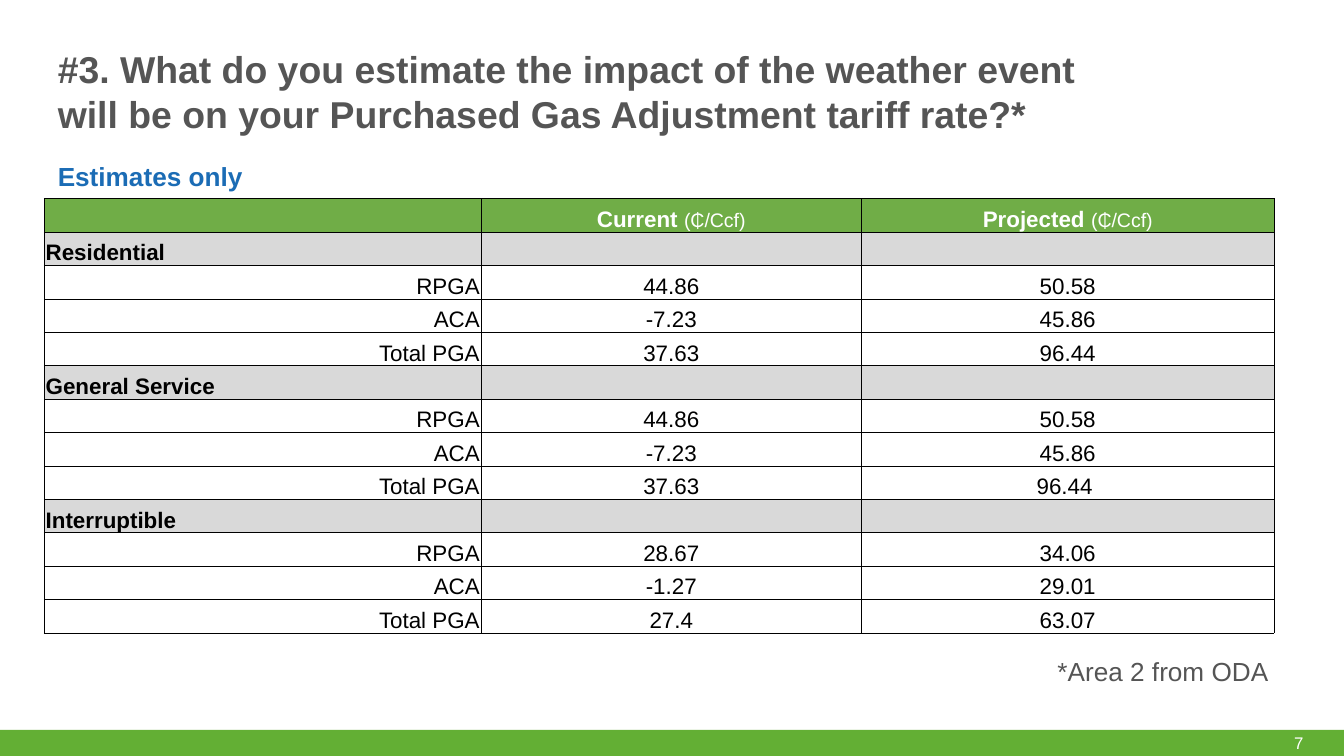
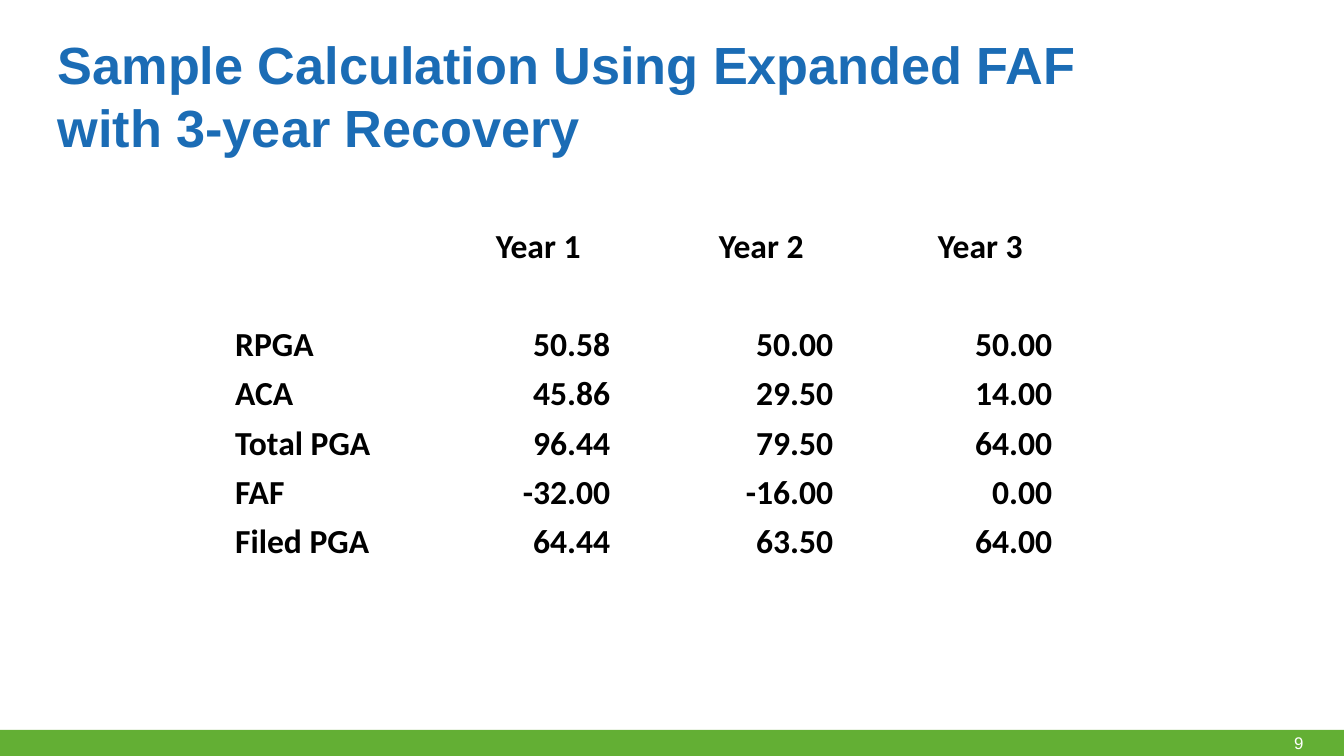
from lxml import etree
from pptx import Presentation
from pptx.dml.color import RGBColor
from pptx.enum.shapes import MSO_SHAPE
from pptx.enum.text import MSO_ANCHOR, MSO_AUTO_SIZE, PP_ALIGN
from pptx.oxml.ns import qn
from pptx.util import Inches, Pt

LEFT, CENTER, RIGHT = PP_ALIGN.LEFT, PP_ALIGN.CENTER, PP_ALIGN.RIGHT
TOP, MIDDLE, BOTTOM = MSO_ANCHOR.TOP, MSO_ANCHOR.MIDDLE, MSO_ANCHOR.BOTTOM
NO_FIT = MSO_AUTO_SIZE.NONE
RECTANGLE = MSO_SHAPE.RECTANGLE

BLACK = RGBColor(0x00, 0x00, 0x00)
WHITE = RGBColor(0xFF, 0xFF, 0xFF)
GRAY = RGBColor(0x55, 0x55, 0x55)
BLUE = RGBColor(0x1B, 0x6C, 0xB5)
BAND_GREEN = RGBColor(0x63, 0xAF, 0x34)
HEADER_GREEN = RGBColor(0x70, 0xAD, 0x47)
GROUP_GRAY = RGBColor(0xD9, 0xD9, 0xD9)

WIDTH, HEIGHT = Inches(10), Inches(5.625)
TITLE_AND_CONTENT, TITLE_ONLY = 1, 5
MARGIN = 3.3
BAND_TOP = 96.53

RATE_GROUPS = {
    "Residential": [("RPGA", "44.86", "50.58"), ("ACA", "-7.23", "45.86"),
                    ("Total PGA", "37.63", "96.44")],
    "General Service": [("RPGA", "44.86", "50.58"), ("ACA", "-7.23", "45.86"),
                        ("Total PGA", "37.63", "96.44 ")],
    "Interruptible": [("RPGA", "28.67", "34.06"), ("ACA", "-1.27", "29.01"),
                      ("Total PGA", "27.4", "63.07")],
}
RECOVERY_ROWS = [
    ("", "Year 1", "Year 2", "Year 3"),
    ("", "", "", ""),
    ("RPGA", "50.58", "50.00", "50.00"),
    ("ACA", "45.86", "29.50", "14.00"),
    ("Total PGA", "96.44", "79.50", "64.00"),
    ("FAF", "-32.00", "-16.00", "0.00"),
    ("Filed PGA", "64.44", "63.50", "64.00"),
]


def area(left, top, width, height):
    """Turn percentages of the slide into a left, top, width, height tuple."""
    return (int(WIDTH * left / 100), int(HEIGHT * top / 100),
            int(WIDTH * width / 100), int(HEIGHT * height / 100))


def add_span(para, text, size, color, bold=False, font="Arial"):
    """Append one formatted run to a paragraph."""
    span = para.add_run()
    span.text = text
    span.font.name, span.font.size, span.font.bold = font, Pt(size), bold
    span.font.color.rgb = color


def fill_box(box, place, text, size, color, bold=False, anchor=TOP):
    """Place a text shape and write its single paragraph."""
    box.left, box.top, box.width, box.height = place
    frame = box.text_frame
    frame.word_wrap, frame.auto_size, frame.vertical_anchor = True, NO_FIT, anchor
    para = frame.paragraphs[0]
    para.alignment = LEFT
    para.space_before = Pt(0)
    add_span(para, text, size, color, bold)
    return para


def remove_bullet(para):
    """Clear the bullet and hanging indent of a list paragraph."""
    properties = para._p.get_or_add_pPr()
    properties.set("marL", "0")
    properties.set("indent", "0")
    etree.SubElement(properties, qn("a:buNone"))


def add_page(deck, layout, number):
    """Add a slide with the green footer band and its page number."""
    page = deck.slides.add_slide(deck.slide_layouts[layout])
    band = page.shapes.add_shape(RECTANGLE, *area(0, BAND_TOP, 100, 3.73))
    band.shadow.inherit = False
    band.fill.solid()
    band.fill.fore_color.rgb = BAND_GREEN
    band.line.fill.background()
    place = area(95.3, BAND_TOP, 4.8, 3.38)
    fill_box(page.shapes.add_textbox(*place), place, number, 9, WHITE, anchor=MIDDLE)
    return page


def add_grid(page, place, column_widths, row_count):
    """Add an unstyled table with the given column widths in inches."""
    frame = page.shapes.add_table(row_count, len(column_widths), *place)
    table = frame.table
    table.first_row = table.horz_banding = False
    for column, width in zip(table.columns, column_widths):
        column.width = Inches(width)
    for row in table.rows:
        row.height = place[3] // row_count
    return table


def draw_borders(cell):
    """Draw thin black lines on all four sides of a cell."""
    properties = cell._tc.get_or_add_tcPr()
    for index, side in enumerate(("a:lnL", "a:lnR", "a:lnT", "a:lnB")):
        line = etree.Element(qn(side), w=str(Pt(0.5)))
        solid = etree.SubElement(line, qn("a:solidFill"))
        etree.SubElement(solid, qn("a:srgbClr"), val=str(BLACK))
        properties.insert(index, line)


def fill_cell(cell, spans, align, size, fill=None):
    """Write (text, size, color, bold, font) runs into a tight cell."""
    cell.margin_left = cell.margin_right = cell.margin_top = Inches(0.01)
    cell.margin_bottom = 0
    cell.vertical_anchor = BOTTOM
    if fill is None:
        cell.fill.background()
    else:
        cell.fill.solid()
        cell.fill.fore_color.rgb = fill
    para = cell.text_frame.paragraphs[0]
    para.alignment = align
    for span in spans:
        if span[0]:
            add_span(para, *span)
    if not para.runs:
        etree.SubElement(para._p, qn("a:endParaRPr"), sz=str(size * 100))


def rate_rows():
    """Yield the fill and the runs of each row in the rate table."""
    unit = ("(₵/Ccf)", 10.5, WHITE)
    yield HEADER_GREEN, [[]] + [[(name, 12, WHITE, True), unit]
                                for name in ("Current ", "Projected ")]
    for group, rates in RATE_GROUPS.items():
        yield GROUP_GRAY, [[(group, 12, BLACK, True)], [], []]
        for rate in rates:
            yield WHITE, [[(text, 12, BLACK)] for text in rate]


def add_rate_table(page):
    """Add the table of current and projected rates."""
    rows = list(rate_rows())
    table = add_grid(page, area(MARGIN, 26.31, 91.5, 57.42), (3.25, 2.83, 3.07), len(rows))
    for row_index, (fill, cells) in enumerate(rows):
        label_align = RIGHT if fill == WHITE else LEFT
        for column, spans in enumerate(cells):
            cell = table.cell(row_index, column)
            fill_cell(cell, spans, CENTER if column else label_align, 12, fill)
            draw_borders(cell)


def add_recovery_table(page):
    """Add the yearly recovery table, with a gap before each year column."""
    widths = (1.09, 0.63, 1.09, 0.57, 1.09, 0.54, 1.09)
    table = add_grid(page, area(17.4, 28.8, 61, 45.69), widths, len(RECOVERY_ROWS))
    for row_index, row in enumerate(RECOVERY_ROWS):
        value_align = RIGHT if row_index else CENTER
        for column in range(len(widths)):
            text = "" if column % 2 else row[column // 2]
            fill_cell(table.cell(row_index, column), [(text, 18, BLACK, True, "Calibri")],
                      value_align if column else LEFT, 18)
        if row[0].endswith(" PGA"):
            table.cell(row_index, 0).merge(table.cell(row_index, 1))


def build_impact_page(deck):
    """Build the slide on the estimated tariff impact."""
    page = add_page(deck, TITLE_AND_CONTENT, "7")
    subtitle = fill_box(page.placeholders[1], area(MARGIN, 20.27, 82.9, 8.71),
                        "Estimates only", 14, BLUE, True)
    remove_bullet(subtitle)
    fill_box(page.shapes.title, area(MARGIN, 3.73, 82, 16.53),
             "#3. What do you estimate the impact of the weather event will be "
             "on your Purchased Gas Adjustment tariff rate?*", 20, GRAY, True, MIDDLE)
    add_rate_table(page)
    place = area(77.7, 85.87, 18.4, 6.04)
    fill_box(page.shapes.add_textbox(*place), place, "*Area 2 from ODA", 14, GRAY)


def build_recovery_page(deck):
    """Build the slide on the three-year recovery sample."""
    page = add_page(deck, TITLE_ONLY, "9")
    fill_box(page.shapes.title, area(MARGIN, 3.38, 82.9, 23.11),
             "Sample Calculation Using Expanded FAF with 3-year Recovery", 28, BLUE, True)
    add_recovery_table(page)


def main():
    """Build and save the deck."""
    deck = Presentation()
    deck.slide_width, deck.slide_height = WIDTH, HEIGHT
    build_impact_page(deck)
    build_recovery_page(deck)
    deck.save("out.pptx")


if __name__ == "__main__":
    main()
